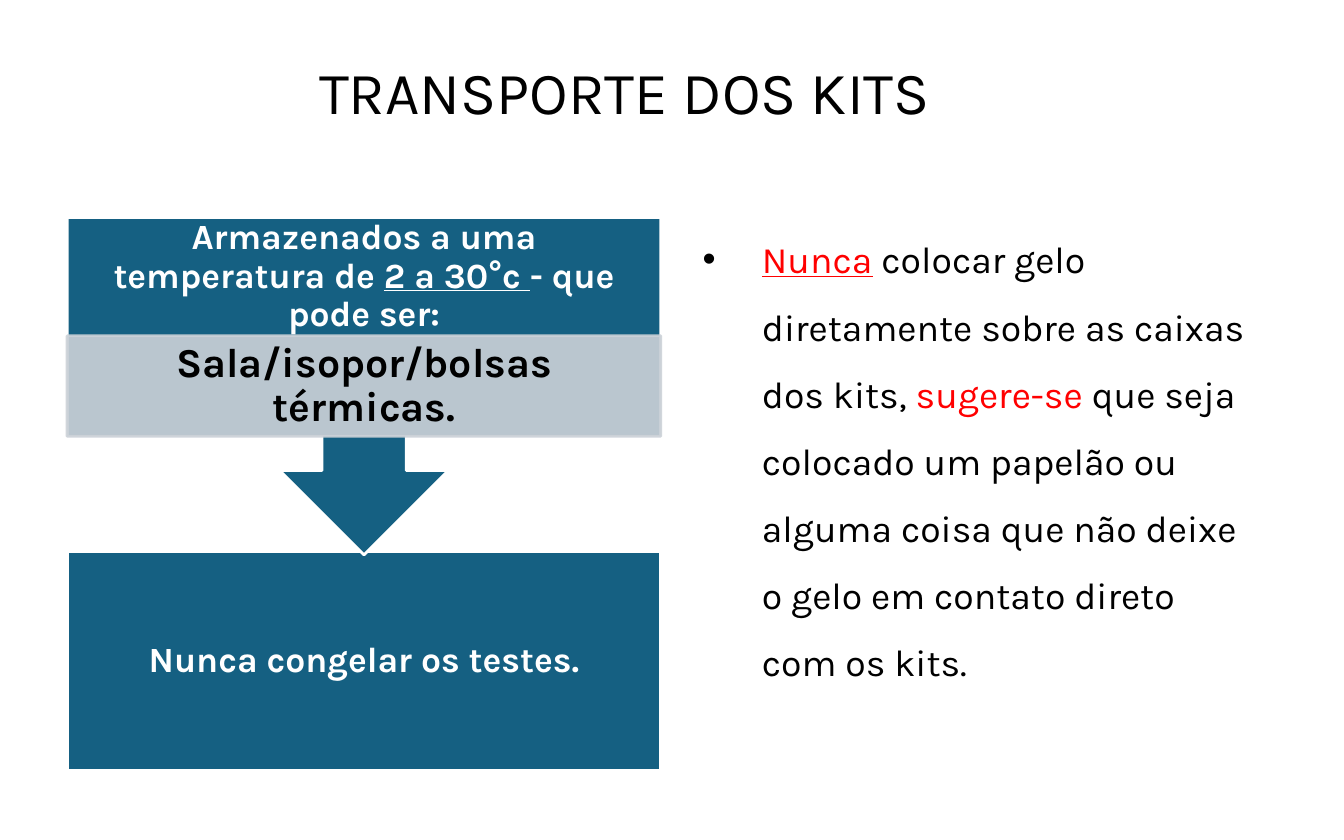
from pptx import Presentation
from pptx.dml.color import RGBColor
from pptx.enum.shapes import MSO_SHAPE
from pptx.enum.text import MSO_ANCHOR, PP_ALIGN
from pptx.oxml.ns import qn
from pptx.util import Cm, Pt
from lxml import etree

RECT, CALLOUT = MSO_SHAPE.RECTANGLE, MSO_SHAPE.UP_ARROW_CALLOUT
MIDDLE, TOP = MSO_ANCHOR.MIDDLE, MSO_ANCHOR.TOP
CENTER, LEFT = PP_ALIGN.CENTER, PP_ALIGN.LEFT

FONT = "Karla"
COLORS = {"blue": "156082", "strip": "CCD2D8", "white": "FFFFFF",
          "black": "000000", "red": "FF0000"}

# Each run: text, colour (None keeps the paragraph's), underlined
TITLE = [("TRANSPORTE DOS KITS", None, False)]
ADVICE = [
    ("Nunca", "red", True),
    (" colocar gelo diretamente sobre as caixas dos kits, ", None, False),
    ("sugere-se", "red", False),
    (" que seja colocado um papelão ou alguma coisa que não deixe "
     "o gelo em contato direto com os kits.", None, False),
]
STORAGE = [
    ("Armazenados a uma temperatura de ", None, False),
    ("2 a 30°c ", None, True),
    ("- que pode ser:", None, False),
]
PLACES = [("Sala/isopor/bolsas térmicas.", None, False)]
FREEZE = [("Nunca congelar os testes.", None, False)]

# Flow column, in cm
FLOW_X, FLOW_W = 1.27, 11.22
STEP_Y, STEP_H, HEAD_H = 4.11, 6.38, 2.24
STRIP_Y, STRIP_H = STEP_Y + HEAD_H, 1.9
LAST_Y, LAST_H = 10.43, 4.14


def rgb(name):
    return RGBColor.from_string(COLORS[name])


def write(shape, runs, size, color="black", bold=False, pad=(0.25, 0.13),
          align=CENTER, anchor=MIDDLE, gap=0.9, bullet=False):
    frame = shape.text_frame
    frame.word_wrap = True
    frame.vertical_anchor = anchor
    frame.margin_left = frame.margin_right = Cm(pad[0])
    frame.margin_top = frame.margin_bottom = Cm(pad[1])
    para = frame.paragraphs[0]
    para.alignment, para.line_spacing = align, gap
    if bullet:
        add_bullet(para)
    font = para.font
    font.name, font.size, font.bold = FONT, Pt(size), bold
    font.color.rgb = rgb(color)
    for text, tint, under in runs:
        run = para.add_run()
        run.text = text
        if tint:
            run.font.color.rgb = rgb(tint)
        if under:
            run.font.underline = True


def add_bullet(para):
    props = para._p.get_or_add_pPr()
    props.set("marL", str(Cm(1.27)))
    props.set("indent", str(Cm(-1.12)))
    tint = etree.SubElement(props, qn("a:buClr"))
    etree.SubElement(tint, qn("a:srgbClr"), val=COLORS["black"])
    etree.SubElement(props, qn("a:buFont"), typeface="Arial")
    etree.SubElement(props, qn("a:buChar"), char="•")


def add_block(slide, kind, top, height, fill, line, alpha=None):
    """Add a filled shape to the flow column; alpha is opacity in percent."""
    shape = slide.shapes.add_shape(
        kind, Cm(FLOW_X), Cm(top), Cm(FLOW_W), Cm(height))
    shape.shadow.inherit = False
    shape.fill.solid()
    shape.fill.fore_color.rgb = rgb(fill)
    shape.line.color.rgb = rgb(line)
    shape.line.width = Pt(1.5)
    if alpha:
        for tint in shape._element.spPr.iter(qn("a:srgbClr")):
            etree.SubElement(tint, qn("a:alpha"), val=str(alpha * 1000))
    return shape


def add_text(slide, left, top, width, height, *args, **style):
    box = slide.shapes.add_textbox(Cm(left), Cm(top), Cm(width), Cm(height))
    write(box, *args, **style)


def main():
    deck = Presentation()
    deck.slide_width, deck.slide_height = Cm(25.4), Cm(15.88)
    slide = deck.slides.add_slide(deck.slide_layouts[6])

    add_text(slide, 0.38, 0.48, 22.86, 2.64, TITLE, 32)
    add_text(slide, 12.88, 3.92, 10.92, 10.46, ADVICE, 20,
             align=LEFT, anchor=TOP, gap=1.5, bullet=True)

    step = {"size": 19, "color": "white", "bold": True, "pad": (0.38, 0.38)}
    last = add_block(slide, RECT, LAST_Y, LAST_H, "blue", "white")
    write(last, FREEZE, **step)

    arrow = add_block(slide, CALLOUT, STEP_Y, STEP_H, "blue", "white")
    arrow.rotation = 180
    add_text(slide, FLOW_X, STEP_Y, FLOW_W, HEAD_H, STORAGE, **step)

    strip = add_block(slide, RECT, STRIP_Y, STRIP_H, "strip", "strip", 90)
    write(strip, PLACES, 22, bold=True, pad=(0.43, 0.08))

    deck.save("out.pptx")


if __name__ == "__main__":
    main()
